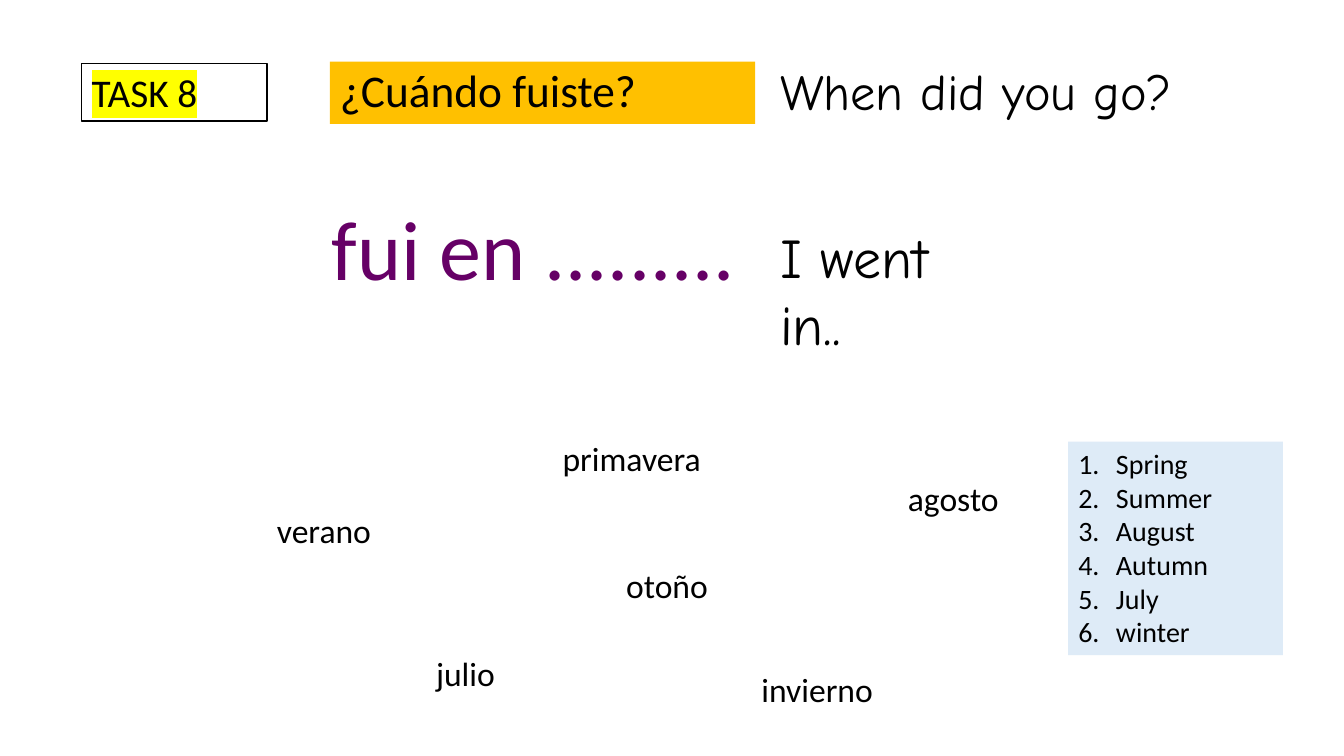
import pptx
import pptx.dml.color
import pptx.enum.shapes
import pptx.enum.text
import pptx.oxml
import pptx.oxml.ns
import pptx.util
from lxml import etree

Cm = pptx.util.Cm
RGBColor = pptx.dml.color.RGBColor
PP_ALIGN = pptx.enum.text.PP_ALIGN
MSO_ANCHOR = pptx.enum.text.MSO_ANCHOR
MSO_AUTO_SIZE = pptx.enum.text.MSO_AUTO_SIZE
qn = pptx.oxml.ns.qn

BLACK = RGBColor(0x00, 0x00, 0x00)
WHITE = RGBColor(0xFF, 0xFF, 0xFF)
PURPLE = RGBColor(0x66, 0x00, 0x66)
AMBER = RGBColor(0xFF, 0xC0, 0x00)
PALE_BLUE = RGBColor(0xDE, 0xEB, 0xF7)
YELLOW = RGBColor(0xFF, 0xFF, 0x00)

SPANISH_FONT = "Calibri"
ENGLISH_FONT = "Comic Neue"


class TaskSlide:
    """Holds the lesson style and the slide being filled."""

    def __init__(self, deck):
        self.slide = deck.slides.add_slide(deck.slide_layouts[1])

    def place(self, holder, box):
        holder.left, holder.top, holder.width, holder.height = map(Cm, box)

    def set_text(self, holder, lines, size, font=SPANISH_FONT, color=BLACK,
                 align=PP_ALIGN.LEFT, anchor=MSO_ANCHOR.TOP,
                 fit=MSO_AUTO_SIZE.SHAPE_TO_FIT_TEXT):
        frame = holder.text_frame
        frame.text = "\n".join(lines)
        frame.word_wrap = True
        frame.auto_size = fit
        frame.vertical_anchor = anchor
        for paragraph in frame.paragraphs:
            paragraph.alignment = align
            paragraph.space_before = pptx.util.Pt(0)
            paragraph.font.size = pptx.util.Pt(size)
            paragraph.font.name = font
            paragraph.font.color.rgb = color
        return frame.paragraphs

    def title(self, text, box, size, fill):
        question = self.slide.shapes.title
        self.place(question, box)
        question.fill.solid()
        question.fill.fore_color.rgb = fill
        paragraphs = self.set_text(question, [text], size, anchor=MSO_ANCHOR.MIDDLE,
                                   fit=MSO_AUTO_SIZE.NONE)
        paragraphs[0].line_spacing = 0.9

    def numbered_list(self, items, box, size, fill):
        answers = self.slide.placeholders[1]
        self.place(answers, box)
        answers.fill.solid()
        answers.fill.fore_color.rgb = fill
        for paragraph in self.set_text(answers, items, size, fit=MSO_AUTO_SIZE.NONE):
            properties = paragraph._p.get_or_add_pPr()
            properties.set("marL", str(Cm(0.95)))
            properties.set("indent", str(-Cm(0.95)))
            numbering = etree.Element(qn("a:buAutoNum"), type="arabicPeriod")
            properties.find(qn("a:defRPr")).addprevious(numbering)

    def text(self, text, box, size, **style):
        phrase = self.slide.shapes.add_textbox(*map(Cm, box))
        self.set_text(phrase, [text], size, **style)

    def label(self, text, box, size, highlight):
        badge = self.slide.shapes.add_shape(
            pptx.enum.shapes.MSO_SHAPE.RECTANGLE, *map(Cm, box))
        badge.shadow.inherit = False
        badge.fill.solid()
        badge.fill.fore_color.rgb = WHITE
        badge.line.color.rgb = BLACK
        badge.line.width = pptx.util.Pt(1)
        run = self.set_text(badge, [text], size)[0].runs[0]
        run.font.color.rgb = BLACK
        marker = etree.Element(qn("a:highlight"))
        etree.SubElement(marker, qn("a:srgbClr"), val=str(highlight))
        run.font._element.find(qn("a:solidFill")).addnext(marker)


def main():
    deck = pptx.Presentation()
    deck.slide_width, deck.slide_height = Cm(33.87), Cm(19.05)
    task = TaskSlide(deck)

    # Question and answer starter
    task.title("¿Cuándo fuiste?", (8.31, 1.55, 10.72, 1.57), 32.4, AMBER)
    task.text("fui en .........", (5.04, 4.83, 16.81, 2.82), 60,
              color=PURPLE, align=PP_ALIGN.CENTER)

    # Spanish words: left, top and width
    spanish_words = {
        "verano": (6.73, 12.73, 8),
        "julio": (10.74, 16.33, 8.99),
        "primavera": (13.93, 10.92, 8.81),
        "otoño": (15.53, 14.12, 7.39),
        "agosto": (22.63, 11.91, 7.01),
        "invierno": (18.94, 16.74, 9.6),
    }
    for word, place in spanish_words.items():
        task.text(word, (*place, 1.27), 24)

    # Task label
    task.label("TASK 8", (2.06, 1.6, 4.67, 1.45), 28, YELLOW)

    # English meanings
    task.numbered_list(["Spring", "Summer", "August", "Autumn", "July", "winter"],
                       (26.92, 11.13, 5.41, 5.38), 20, PALE_BLUE)
    task.text("When did you go?", (19.41, 1.4, 10.9, 1.8), 36, font=ENGLISH_FONT)
    task.text("I went in..", (19.41, 5.49, 5.28, 1.96), 40, font=ENGLISH_FONT)

    deck.save("out.pptx")


if __name__ == "__main__":
    main()
